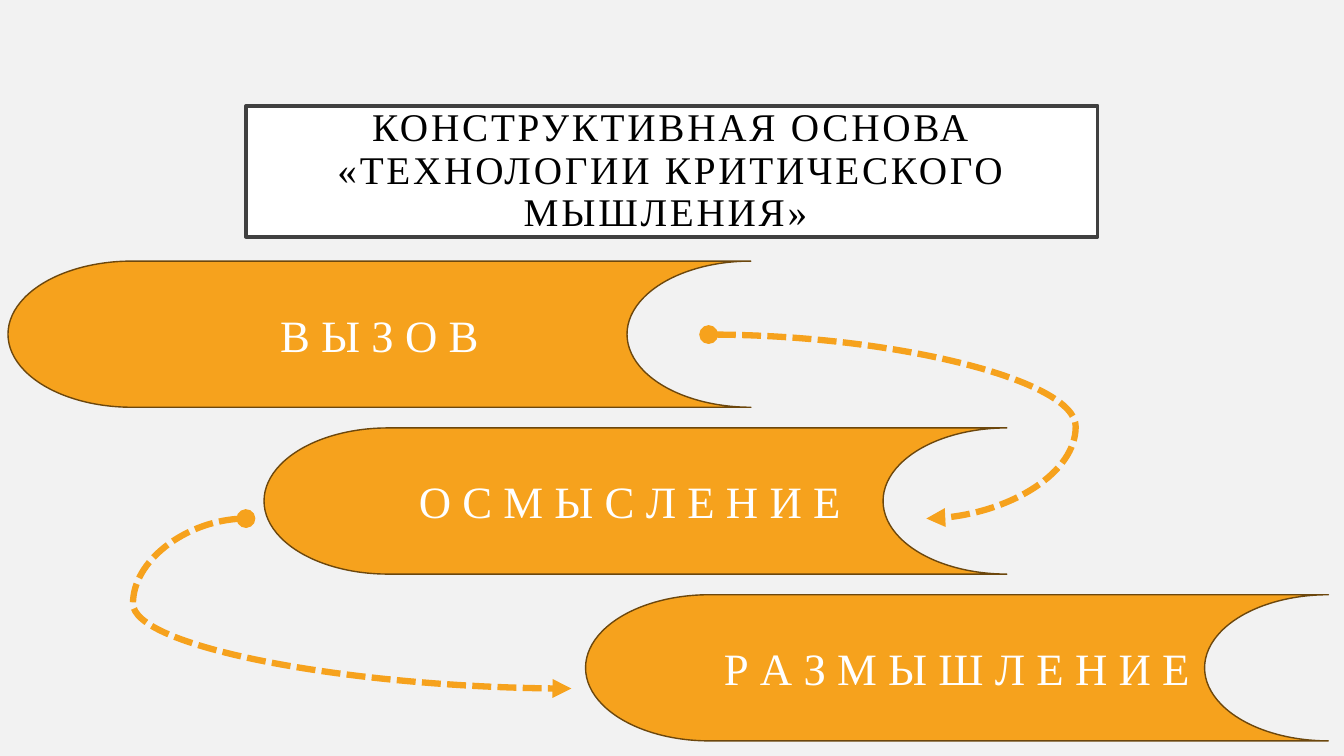
import pptx
import pptx.util
import pptx.dml.color
import pptx.enum.dml
import pptx.enum.shapes
import pptx.enum.text
import pptx.oxml
import pptx.oxml.ns
from lxml import etree

Pt = pptx.util.Pt
FONT = "Times New Roman"
ORANGE, BROWN, WHITE = "F6A21D", "6C470D", "FFFFFF"

TITLE = "КОНСТРУКТИВНАЯ ОСНОВА «ТЕХНОЛОГИИ КРИТИЧЕСКОГО МЫШЛЕНИЯ» "
STAGES = [
    ("В Ы З О В", 5.76),
    ("О С М Ы С Л Е Н И Е ", 188.64),
    ("Р А З М Ы Ш Л Е Н И Е", 418.32),
]
STAGE_TOP, STAGE_STEP, STAGE_W, STAGE_H = 186.5, 119.15, 530.6, 104.4
ARROWS = [
    ((506.2, 239), (661.7, 370.4), 168600),
    ((175.7, 370.4), (408.2, 491.8), -34700),
]


def rgb(value):
    return pptx.dml.color.RGBColor.from_string(value)


def style(shape, fill, line, width):
    shape.fill.solid()
    shape.fill.fore_color.rgb = rgb(fill)
    shape.line.color.rgb = rgb(line)
    shape.line.width = Pt(width)


def write(shape, text, size, color):
    tf = shape.text_frame
    tf.text = text
    tf.word_wrap = True
    tf.auto_size = pptx.enum.text.MSO_AUTO_SIZE.NONE
    tf.vertical_anchor = pptx.enum.text.MSO_ANCHOR.MIDDLE
    p = tf.paragraphs[0]
    p.alignment = pptx.enum.text.PP_ALIGN.CENTER
    r = p.runs[0]
    r.font.name = FONT
    r.font.size = Pt(size)
    r.font.color.rgb = rgb(color)
    return p


def add_title(s):
    sp = s.shapes.title
    sp.left, sp.top, sp.width, sp.height = Pt(175.7), Pt(75.6), Pt(608.4), Pt(93.6)
    style(sp, WHITE, "404040", 2.5)
    p = write(sp, TITLE, 28, "000000")
    p.line_spacing = 0.9
    p.runs[0].font._element.set("spc", "200")
    tf = sp.text_frame
    tf.margin_left = tf.margin_right = tf.margin_top = tf.margin_bottom = Pt(14.4)


def add_stage(s, index, text, left):
    sp = s.shapes.add_shape(
        pptx.enum.shapes.MSO_SHAPE.FLOWCHART_STORED_DATA,
        Pt(left), Pt(STAGE_TOP + index * STAGE_STEP), Pt(STAGE_W), Pt(STAGE_H))
    sp.shadow.inherit = False
    style(sp, ORANGE, BROWN, 1)
    write(sp, text, 32, WHITE)


def add_arrow(s, start, end, bend):
    qn = pptx.oxml.ns.qn
    cx = s.shapes.add_connector(
        pptx.enum.shapes.MSO_CONNECTOR.CURVE, *map(Pt, start + end))
    cx.line.color.rgb = rgb(ORANGE)
    cx.line.width = Pt(4.5)
    cx.line.dash_style = pptx.enum.dml.MSO_LINE.SQUARE_DOT
    ln = cx.line._get_or_add_ln()
    etree.SubElement(ln, qn("a:headEnd"), type="oval")
    etree.SubElement(ln, qn("a:tailEnd"), type="triangle")
    sp_pr = cx._element.spPr
    etree.SubElement(sp_pr, qn("a:effectLst"))
    geom = sp_pr.find(qn("a:prstGeom"))
    guides = geom.find(qn("a:avLst"))
    if guides is None:
        guides = etree.SubElement(geom, qn("a:avLst"))
    etree.SubElement(guides, qn("a:gd"), name="adj1", fmla=f"val {bend}")


def main():
    prs = pptx.Presentation()
    prs.slide_width, prs.slide_height = Pt(960), Pt(540)
    s = prs.slides.add_slide(prs.slide_layouts[5])
    s.background.fill.solid()
    s.background.fill.fore_color.rgb = rgb("F2F2F2")
    add_title(s)
    for index, (text, left) in enumerate(STAGES):
        add_stage(s, index, text, left)
    for start, end, bend in ARROWS:
        add_arrow(s, start, end, bend)
    prs.save("out.pptx")


if __name__ == "__main__":
    main()
